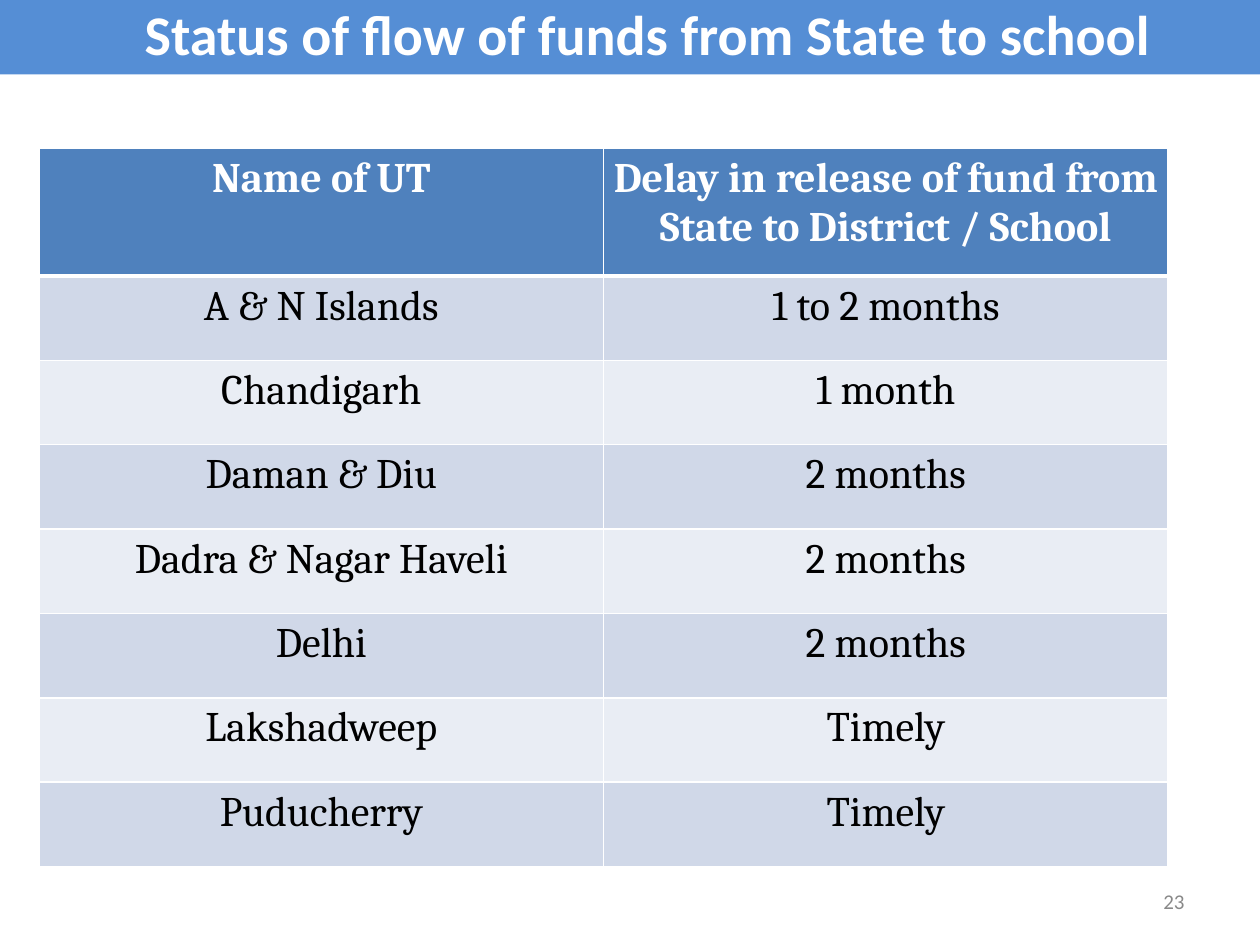
from dataclasses import dataclass

from lxml.etree import SubElement
from pptx import Presentation
from pptx.dml.color import RGBColor
from pptx.enum.shapes import MSO_SHAPE
from pptx.enum.text import MSO_ANCHOR, PP_ALIGN
from pptx.oxml.ns import qn
from pptx.util import Inches, Pt


@dataclass(frozen=True)
class Theme:
    banner: str = "558ED5"
    header: str = "4F81BD"
    bands: tuple = ("D0D8E8", "E9EDF4")
    white: str = "FFFFFF"
    black: str = "000000"
    grey: str = "898989"
    title_font: str = "Calibri"
    table_font: str = "Cambria"
    title_size: int = 32
    table_size: int = 24
    number_size: int = 12


def write(frame, text, *, font, size, color, bold=False,
          align=PP_ALIGN.CENTER, spacing=None):
    frame.word_wrap = True
    for index, line in enumerate(text.split("\n")):
        paragraph = frame.add_paragraph() if index else frame.paragraphs[0]
        paragraph.alignment = align
        paragraph.line_spacing = spacing
        run = paragraph.add_run()
        run.text = line
        run.font.name = font
        run.font.size = Pt(size)
        run.font.bold = bold
        run.font.color.rgb = RGBColor.from_string(color)


def draw_borders(cell, color, widths):
    properties = cell._tc.get_or_add_tcPr()
    for index, (side, width) in enumerate(widths.items()):
        line = SubElement(properties, qn(f"a:ln{side}"), w=str(Pt(width)))
        fill = SubElement(line, qn("a:solidFill"))
        SubElement(fill, qn("a:srgbClr"), val=color)
        properties.insert(index, line)


theme = Theme()
deck = Presentation()
deck.slide_width = Inches(10)
deck.slide_height = Inches(7.5)
slide = deck.slides.add_slide(deck.slide_layouts[6])

delays = [
    ("Name of UT", "Delay in release of fund from\nState to District / School"),
    ("A & N Islands", "1 to 2 months"),
    ("Chandigarh", "1 month"),
    ("Daman & Diu", "2 months"),
    ("Dadra & Nagar Haveli", "2 months"),
    ("Delhi", "2 months"),
    ("Lakshadweep", "Timely"),
    ("Puducherry", "Timely"),
]
column_width = Inches(4.48)
row_height = Inches(0.67)
header_height = Inches(1.01)

delay_table = slide.shapes.add_table(
    len(delays), 2, Inches(0.31), Inches(1.18), 2 * column_width,
    header_height + (len(delays) - 1) * row_height).table
for column in delay_table.columns:
    column.width = column_width

for row_index, entries in enumerate(delays):
    is_header = row_index == 0
    delay_table.rows[row_index].height = header_height if is_header else row_height
    for column_index, entry in enumerate(entries):
        cell = delay_table.cell(row_index, column_index)
        cell.margin_left = cell.margin_right = Inches(0.07)
        cell.margin_top = cell.margin_bottom = Inches(0.05)
        cell.fill.solid()
        cell.fill.fore_color.rgb = RGBColor.from_string(
            theme.header if is_header else theme.bands[(row_index - 1) % 2])
        draw_borders(cell, theme.white, {
            "L": 1, "R": 1, "T": 3 if row_index == 1 else 1,
            "B": 3 if is_header else 1})
        write(cell.text_frame, entry, font=theme.table_font,
              size=theme.table_size, bold=is_header,
              color=theme.white if is_header else theme.black)

banner = slide.shapes.add_shape(
    MSO_SHAPE.RECTANGLE, 0, 0, deck.slide_width, Inches(0.59))
banner.shadow.inherit = False
banner.fill.solid()
banner.fill.fore_color.rgb = RGBColor.from_string(theme.banner)
banner.line.fill.background()
banner.text_frame.vertical_anchor = MSO_ANCHOR.MIDDLE
banner.text_frame.margin_left = Inches(0.38)
write(banner.text_frame, "Status of flow of funds from State to school",
      font=theme.title_font, size=theme.title_size, color=theme.white,
      bold=True, spacing=0.9)

page_number = slide.shapes.add_textbox(
    Inches(7.17), Inches(6.95), Inches(2.33), Inches(0.4))
page_number.text_frame.vertical_anchor = MSO_ANCHOR.MIDDLE
write(page_number.text_frame, "23", font=theme.title_font,
      size=theme.number_size, color=theme.grey, align=PP_ALIGN.RIGHT)

deck.save("out.pptx")
